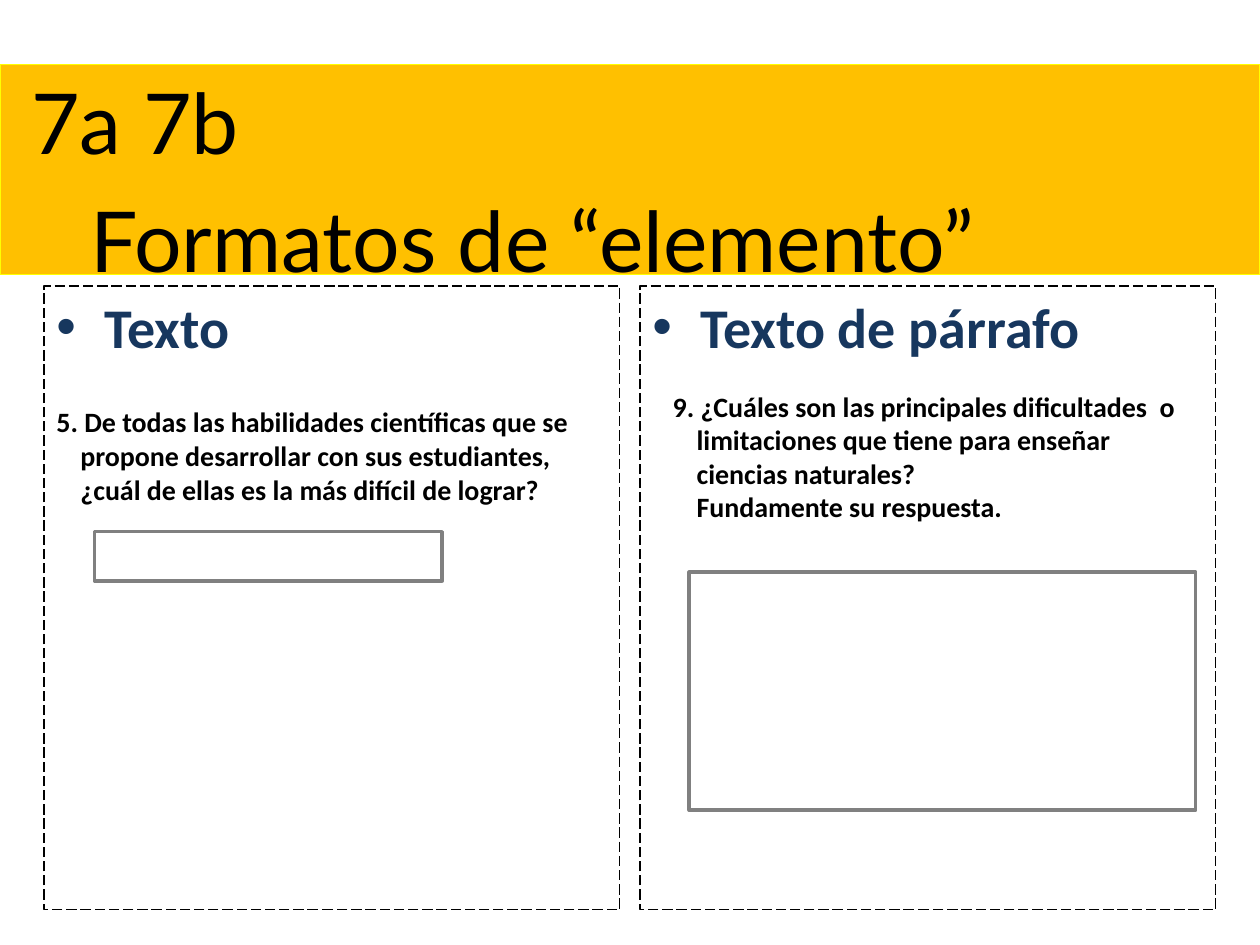
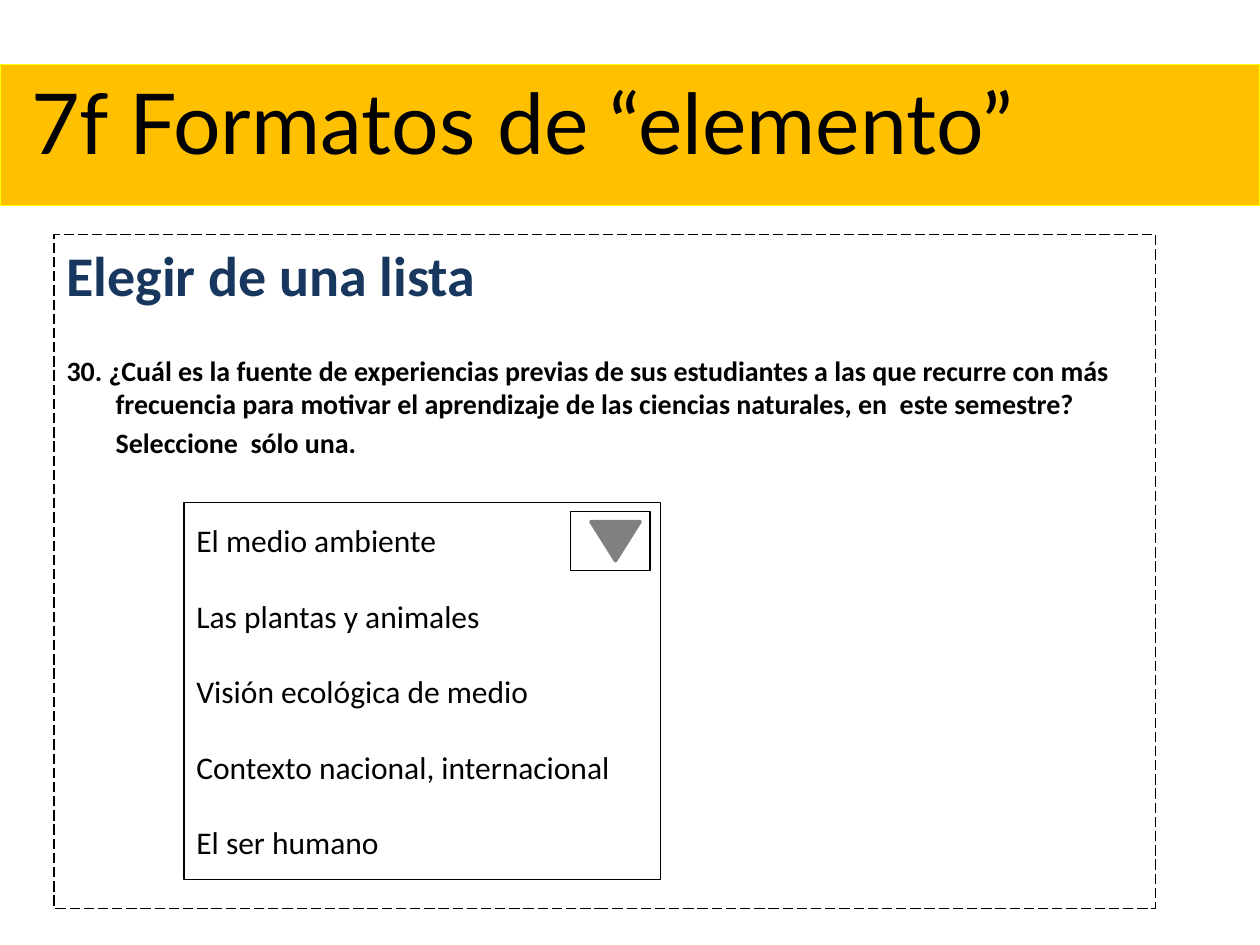
from lxml import etree
from pptx import Presentation
from pptx.dml.color import RGBColor
from pptx.enum.dml import MSO_LINE
from pptx.enum.shapes import MSO_SHAPE
from pptx.enum.text import MSO_ANCHOR, PP_ALIGN
from pptx.oxml.ns import qn
from pptx.util import Inches, Pt

BLACK, WHITE, GRAY = "000000", "FFFFFF", "808080"
AMBER, YELLOW, NAVY = "FFC000", "FFFF00", "17375E"
TITLE_FONT, BODY_FONT = "Lato", "Calibri"
BAND_TOP = 0.51
BLANK_LINE = 26  # points of space that stand for one empty line


def rgb(value):
    return RGBColor.from_string(value)


def add_box(slide, box, fill=None, line=BLACK, width=0.75,
            kind=MSO_SHAPE.RECTANGLE, anchor=MSO_ANCHOR.TOP):
    """Add a flat shape at box = (left, top, width, height) in inches."""
    shape = slide.shapes.add_shape(kind, *(Inches(side) for side in box))
    shape.shadow.inherit = False
    if fill:
        shape.fill.solid()
        shape.fill.fore_color.rgb = rgb(fill)
    else:
        shape.fill.background()
    shape.line.color.rgb = rgb(line)
    shape.line.width = Pt(width)
    shape.text_frame.word_wrap = True
    shape.text_frame.vertical_anchor = anchor
    return shape


def write(frame, text, size, font=BODY_FONT, color=BLACK, bold=False,
          margin=0, hanging=0, before=0, after=0, bullet=False):
    """Append a paragraph; margin and hanging indent are in inches."""
    first = frame.paragraphs[0]
    paragraph = frame.add_paragraph() if first.runs else first
    paragraph.text = text
    paragraph.alignment = PP_ALIGN.LEFT
    paragraph.space_before, paragraph.space_after = Pt(before), Pt(after)
    style = paragraph.runs[0].font
    style.name, style.size, style.bold = font, Pt(size), bold
    style.color.rgb = rgb(color)
    properties = paragraph._p.get_or_add_pPr()
    properties.set("marL", str(Inches(margin)))
    properties.set("indent", str(-Inches(hanging)))
    if bullet:
        etree.SubElement(properties, qn("a:buFont")).set("typeface", "Arial")
        etree.SubElement(properties, qn("a:buChar")).set("char", "•")


def add_title_band(slide, height, lines):
    """Lines are (text, indent in inches) pairs."""
    band = add_box(slide, (0, BAND_TOP, 10, height), AMBER, YELLOW)
    for text, indent in lines:
        write(band.text_frame, text, 48, TITLE_FONT, margin=indent, after=10)


def add_panel(slide, box, heading, bullet=True):
    panel = add_box(slide, box)
    panel.line.dash_style = MSO_LINE.LONG_DASH
    write(panel.text_frame, heading, 32, color=NAVY, bold=True,
          margin=0.38, hanging=0.38, bullet=bullet)
    return panel.text_frame


def write_question(frame, question, indent, before=0):
    write(frame, question, 16, bold=True, margin=indent, hanging=indent,
          before=before)


def write_instruction(frame, instruction, indent, before=0):
    write(frame, instruction, 16, bold=True, margin=indent, before=before)


def add_answer_field(slide, box):
    add_box(slide, box, WHITE, GRAY, 2)


def add_short_text_panel(slide, box):
    left, top = box[:2]
    body = add_panel(slide, box, "Texto")
    write_question(body, "5. De todas las habilidades científicas que se propone "
                   "desarrollar con sus estudiantes, ¿cuál de ellas es la más "
                   "difícil de lograr?", 0.19, BLANK_LINE)
    add_answer_field(slide, (left + 0.4, top + 1.95, 2.76, 0.39))


def add_paragraph_text_panel(slide, box):
    left, top = box[:2]
    add_panel(slide, box, "Texto de párrafo")
    question_box = slide.shapes.add_textbox(
        Inches(left + 0.16), Inches(top + 0.77), Inches(4.25), Inches(1.18))
    frame = question_box.text_frame
    frame.word_wrap = True
    write_question(frame, "9. ¿Cuáles son las principales dificultades  o "
                   "limitaciones que tiene para enseñar ciencias naturales?", 0.19)
    write_instruction(frame, "Fundamente su respuesta.", 0.19)
    add_answer_field(slide, (left + 0.39, top + 2.27, 4.02, 1.89))


def add_dropdown(slide, box, options):
    left, top, width, _ = box
    menu = add_box(slide, box, WHITE, anchor=MSO_ANCHOR.MIDDLE)
    for index, option in enumerate(options):
        write(menu.text_frame, option, 18, before=21.5 if index else 0)
    button_left, button_top = left + width - 0.71, top + 0.07
    add_box(slide, (button_left, button_top, 0.63, 0.47))
    arrow = add_box(slide, (button_left + 0.16, button_top + 0.08, 0.39, 0.31),
                    GRAY, GRAY, 2, MSO_SHAPE.ISOSCELES_TRIANGLE)
    arrow.rotation = 180


def add_list_panel(slide, box):
    left, top = box[:2]
    body = add_panel(slide, box, "Elegir de una lista", bullet=False)
    write_question(body, "30. ¿Cuál es la fuente de experiencias previas de sus "
                   "estudiantes a las que recurre con más frecuencia para motivar "
                   "el aprendizaje de las ciencias naturales, en  este semestre?",
                   0.39, BLANK_LINE)
    write_instruction(body, "Seleccione  sólo una.", 0.39, before=3.2)
    add_dropdown(slide, (left + 1.03, top + 2.13, 3.78, 2.99), [
        "El medio ambiente",
        "Las plantas y animales",
        "Visión ecológica de medio",
        "Contexto nacional, internacional",
        "El ser humano",
    ])


def build_text_formats(slide):
    add_title_band(slide, 1.67, [("7a 7b", 0.15),
                                 ("Formatos de “elemento”", 0.62)])
    add_short_text_panel(slide, (0.35, 2.27, 4.57, 4.95))
    add_paragraph_text_panel(slide, (5.08, 2.27, 4.57, 4.95))


def build_list_format(slide):
    add_title_band(slide, 1.12, [("7f Formatos de “elemento”", 0.15)])
    add_list_panel(slide, (0.43, 1.86, 8.74, 5.35))


def main():
    deck = Presentation()
    deck.slide_width, deck.slide_height = Inches(10), Inches(7.5)
    for build in (build_text_formats, build_list_format):
        build(deck.slides.add_slide(deck.slide_layouts[6]))
    deck.save("out.pptx")


if __name__ == "__main__":
    main()
